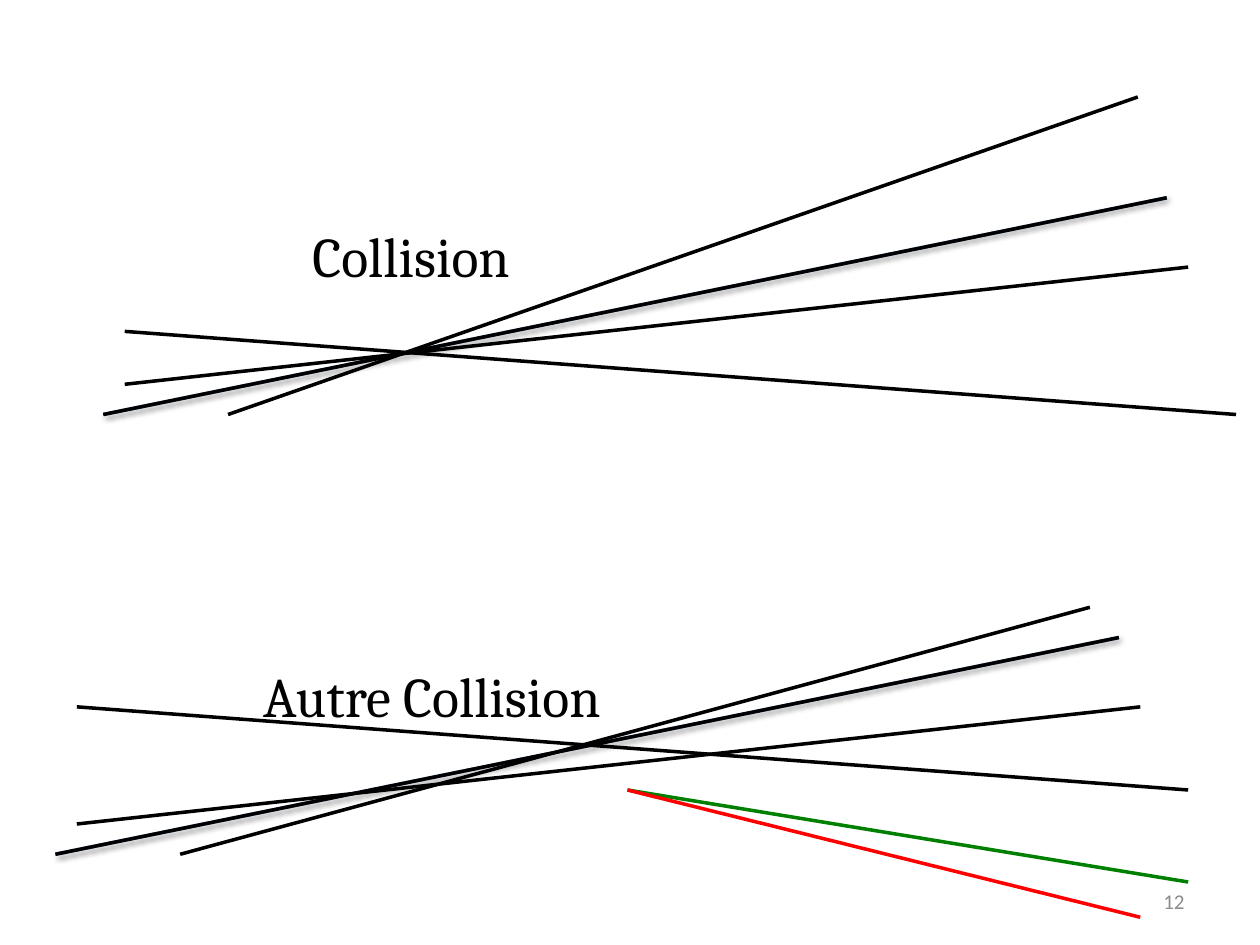
import pptx
import pptx.dml.color
import pptx.enum.shapes
import pptx.enum.text
import pptx.oxml
import pptx.oxml.ns
import pptx.util
from lxml import etree

Inches = pptx.util.Inches
Align = pptx.enum.text.PP_ALIGN
Anchor = pptx.enum.text.MSO_ANCHOR

COLORS = {"black": "000000", "blue": "4F81BD", "green": "008000",
          "red": "FF0000", "gray": "8C8C8C"}
SHADOW = (
    f'<a:outerShdw {pptx.oxml.ns.nsdecls("a")} blurRad="40000" dist="20000" '
    'dir="5400000" rotWithShape="0"><a:srgbClr val="000000">'
    '<a:alpha val="38000"/></a:srgbClr></a:outerShdw>')


def color(name):
    return pptx.dml.color.RGBColor.from_string(COLORS[name])


def write(frame, text, size=32, font="Cambria", ink="black", align=Align.LEFT):
    para = frame.paragraphs[0]
    para.alignment = align
    run = para.add_run()
    run.text = text
    run.font.size = pptx.util.Pt(size)
    run.font.name = font
    run.font.color.rgb = color(ink)


class Page:
    """Holds the line style and the current slide."""

    width = pptx.util.Pt(2)

    def __init__(self, slide):
        self.slide = slide

    def line(self, x1, y1, x2, y2, ink="black", shadow=False):
        line = self.slide.shapes.add_connector(
            pptx.enum.shapes.MSO_CONNECTOR.STRAIGHT,
            Inches(x1), Inches(y1), Inches(x2), Inches(y2))
        line.line.color.rgb = color(ink)
        line.line.width = self.width
        props = line._element.spPr
        effects = etree.SubElement(props, pptx.oxml.ns.qn("a:effectLst"))
        if shadow:
            effects.append(pptx.oxml.parse_xml(SHADOW))

    def text(self, text, x, y, w, h, wrap=False, anchor=Anchor.TOP, **style):
        box = self.slide.shapes.add_textbox(
            Inches(x), Inches(y), Inches(w), Inches(h))
        frame = box.text_frame
        frame.word_wrap = wrap
        frame.vertical_anchor = anchor
        if not wrap:
            frame.auto_size = pptx.enum.text.MSO_AUTO_SIZE.SHAPE_TO_FIT_TEXT
        write(frame, text, **style)

    def bundle(self, main, others):
        """Draw a shadowed main track and the tracks that cross it."""
        self.line(*main, ink="blue", shadow=True)
        for track in [main, *others]:
            self.line(*track)


def main():
    deck = pptx.Presentation()
    deck.slide_width, deck.slide_height = Inches(10), Inches(7.5)
    page = Page(deck.slides.add_slide(deck.slide_layouts[6]))

    # First collision: all tracks meet in one point
    page.bundle((0.82, 3.29, 9.26, 1.57), [
        (0.99, 3.05, 9.43, 2.12),
        (0.99, 2.63, 9.81, 3.29),
        (1.81, 3.29, 9.03, 0.77)])
    page.text("Collision", 2.38, 1.71, 1.85, 0.64)

    # Second collision: tracks cross in several points
    page.bundle((0.44, 6.78, 8.88, 5.06), [
        (0.61, 6.54, 9.05, 5.61),
        (0.61, 5.61, 9.43, 6.27),
        (1.43, 6.78, 8.65, 4.82)])
    page.text("Autre Collision", 1.99, 5.2, 2.98, 0.64)

    # Pair of coloured tracks from a common start
    page.line(4.98, 6.27, 9.43, 7, ink="green")
    page.line(4.98, 6.27, 9.05, 7.28, ink="red")

    # Slide number
    page.text("12", 7.17, 6.95, 2.33, 0.4, wrap=True, anchor=Anchor.MIDDLE,
              size=12, font="Calibri", ink="gray", align=Align.RIGHT)

    deck.save("out.pptx")


if __name__ == "__main__":
    main()
